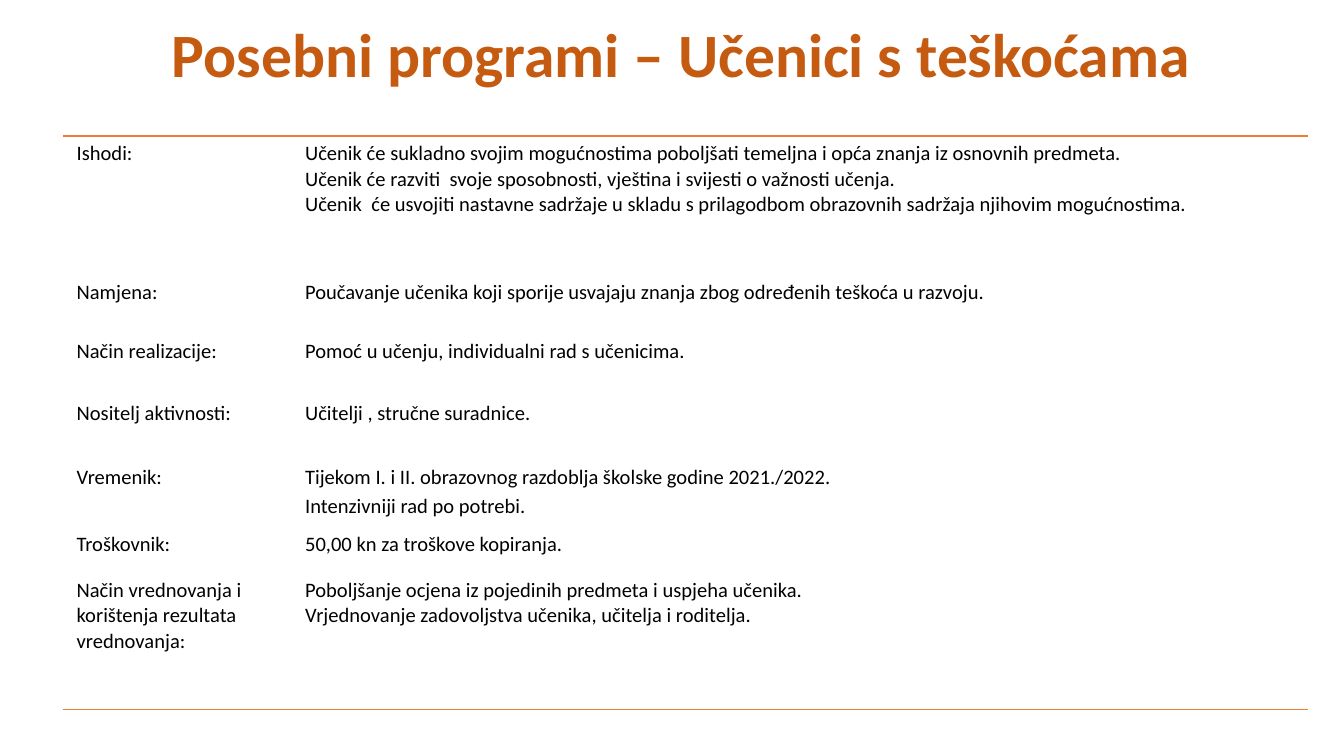
from lxml import etree
from pptx import Presentation
from pptx.dml.color import RGBColor
from pptx.enum.text import MSO_ANCHOR, PP_ALIGN
from pptx.oxml.ns import qn
from pptx.util import Inches, Pt

MIDDLE = MSO_ANCHOR.MIDDLE
LEFT = PP_ALIGN.LEFT
FONT = "Calibri"
BLACK = RGBColor(0x00, 0x00, 0x00)
RUST = RGBColor(0xC5, 0x5A, 0x11)
ORANGE = RGBColor(0xED, 0x7D, 0x31)

COLUMN_WIDTHS = [1.7, 7.56]
# Row height, label, lines of the description
ROWS = [
    (1.03, "Ishodi:", [
        "Učenik će sukladno svojim mogućnostima poboljšati temeljna i opća znanja iz osnovnih predmeta.",
        "Učenik će razviti  svoje sposobnosti, vještina i svijesti o važnosti učenja.",
        "Učenik  će usvojiti nastavne sadržaje u skladu s prilagodbom obrazovnih sadržaja njihovim mogućnostima.",
    ]),
    (0.44, "Namjena:", ["Poučavanje učenika koji sporije usvajaju znanja zbog određenih teškoća u razvoju."]),
    (0.46, "Način realizacije:", ["Pomoć u učenju, individualni rad s učenicima."]),
    (0.48, "Nositelj aktivnosti:", ["Učitelji , stručne suradnice."]),
    (0.5, "Vremenik:", [
        "Tijekom I. i II. obrazovnog razdoblja školske godine 2021./2022.",
        "Intenzivniji rad po potrebi.",
    ]),
    (0.34, "Troškovnik:", ["50,00 kn za troškove kopiranja."]),
    (1.02, "Način vrednovanja i korištenja rezultata vrednovanja:", [
        "Poboljšanje ocjena iz pojedinih predmeta i uspjeha učenika.",
        "Vrjednovanje zadovoljstva učenika, učitelja i roditelja.",
    ]),
]
SCHEDULE_ROW = 4


def set_border(cell, side, color=None):
    """Draw one cell edge (L, R, T or B) 1 pt wide, or hide it without a color."""
    properties = cell._tc.get_or_add_tcPr()
    line = etree.Element(qn(f"a:ln{side}"), w=str(Pt(1)))
    if color is None:
        etree.SubElement(line, qn("a:noFill"))
    else:
        fill = etree.SubElement(line, qn("a:solidFill"))
        etree.SubElement(fill, qn("a:srgbClr"), val=str(color))
    properties.insert("LRTB".index(side), line)


prs = Presentation()
prs.slide_width = Inches(10)
prs.slide_height = Inches(10 * 9 / 16)
slide = prs.slides.add_slide(prs.slide_layouts[6])

table = slide.shapes.add_table(
    len(ROWS), len(COLUMN_WIDTHS), Inches(0.47), Inches(1.01), Inches(9.26), Inches(4.28)
).table
table.first_row = False
table.horz_banding = False
for column, width in zip(table.columns, COLUMN_WIDTHS):
    column.width = Inches(width)

last_row = len(ROWS) - 1
for row, (height, label, lines) in enumerate(ROWS):
    table.rows[row].height = Inches(height)
    for col, content in enumerate([label, "\n".join(lines)]):
        cell = table.cell(row, col)
        cell.fill.background()
        cell.margin_left = cell.margin_right = Inches(0.1)
        cell.margin_top = cell.margin_bottom = Inches(0.04)
        set_border(cell, "L")
        set_border(cell, "R")
        set_border(cell, "T", ORANGE if row == 0 else None)
        set_border(cell, "B", ORANGE if row == last_row else None)
        cell.text_frame.text = content
        for paragraph in cell.text_frame.paragraphs:
            for run in paragraph.runs:
                run.font.name = FONT
                run.font.size = Pt(11)
                run.font.color.rgb = BLACK
table.cell(SCHEDULE_ROW, 1).text_frame.paragraphs[1].space_before = Pt(2)

title = slide.shapes.add_textbox(Inches(1.18), Inches(0), Inches(8.35), Inches(0.85)).text_frame
title.word_wrap = True
title.vertical_anchor = MIDDLE
title.text = "Posebni programi – Učenici s teškoćama"
heading = title.paragraphs[0]
heading.alignment = LEFT
heading.line_spacing = 0.9
heading_font = heading.runs[0].font
heading_font.name = FONT
heading_font.size = Pt(33)
heading_font.bold = True
heading_font.color.rgb = RUST

prs.save("out.pptx")
